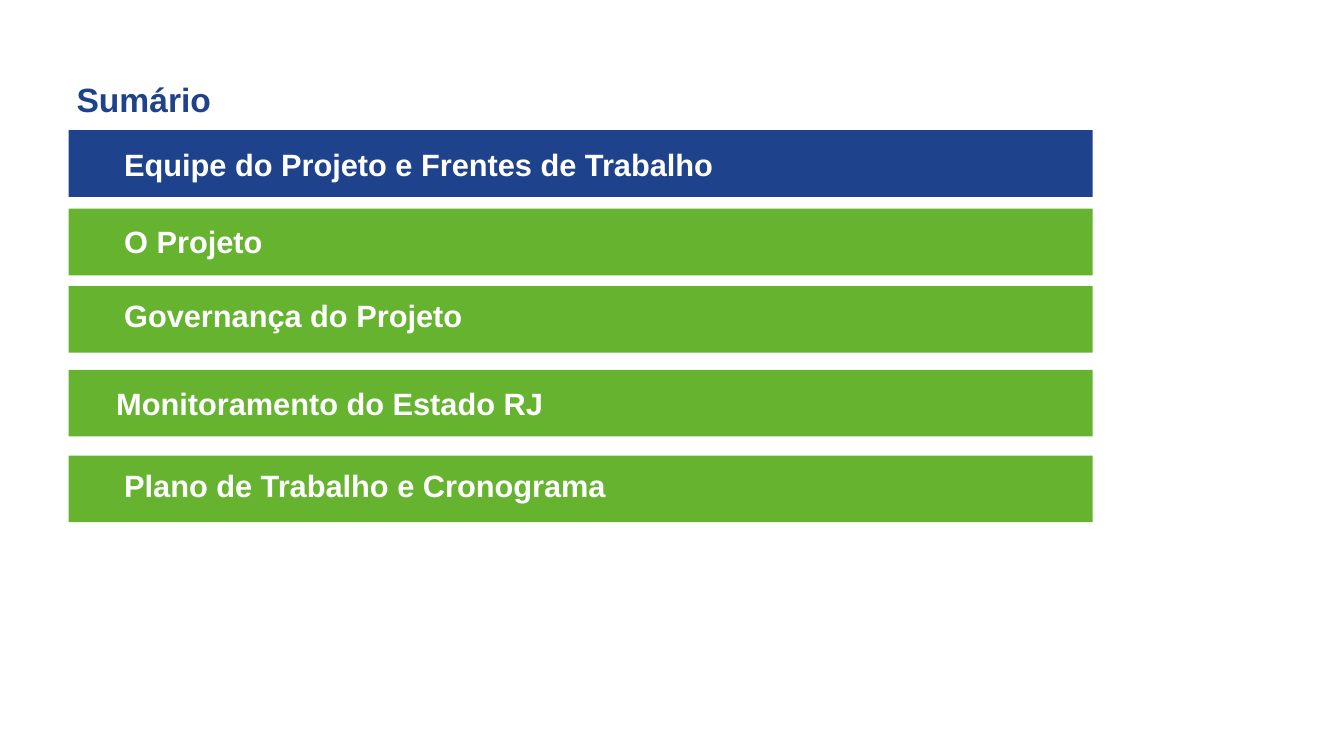
from pptx import Presentation
from pptx.dml.color import RGBColor
from pptx.enum.shapes import MSO_SHAPE as Shape
from pptx.enum.text import MSO_ANCHOR as Anchor, MSO_AUTO_SIZE as AutoSize, PP_ALIGN as Align
from pptx.util import Cm, Pt

BLUE, GREEN, WHITE = "1E428B", "65B32E", "FFFFFF"
BAR_LEFT, BAR_WIDTH, BAR_HEIGHT = 1.73, 25.81, 1.68
LABEL_HEIGHT, INSET, TEXT_INDENT = 1.19, 0.13, 1.4
TOPICS = [
    ("Equipe do Projeto e Frentes de Trabalho", 3.28, 0, 0.25, BLUE),
    ("O Projeto", 5.26, 0, 0.23, GREEN),
    ("Governança do Projeto", 7.21, 0, 0.13, GREEN),
    ("Monitoramento do Estado RJ", 9.32, -0.2, 0.25, GREEN),
    ("Plano de Trabalho e Cronograma", 11.48, 0, 0.15, GREEN),
]


def color(value):
    """Turn a hex string into a colour."""
    return RGBColor.from_string(value)


def write(shape, text, size, text_color):
    """Write one bold, indented line in the middle of a shape."""
    frame = shape.text_frame
    frame.text = text
    frame.word_wrap = True
    frame.auto_size = AutoSize.NONE
    frame.vertical_anchor = Anchor.MIDDLE
    frame.margin_left = Cm(TEXT_INDENT)
    frame.margin_top = frame.margin_right = frame.margin_bottom = Cm(INSET)
    paragraph = frame.paragraphs[0]
    paragraph.alignment = Align.LEFT
    paragraph.line_spacing = 1.0
    paragraph.space_before = Pt(0)
    font = paragraph.font
    font.name, font.size, font.bold = "Arial", Pt(size), True
    font.color.rgb = color(text_color)


def add_title(slide, left, top, width, height):
    """Place and format the slide title."""
    title = slide.shapes.title
    title.left, title.top = Cm(left), Cm(top)
    title.width, title.height = Cm(width), Cm(height)
    write(title, "Sumário", 24, BLUE)


def add_topic(slide, left, top, width, height, text, shift, drop, fill):
    """Group a coloured bar with its label, offset by shift and drop."""
    group = slide.shapes.add_group_shape()
    bar = group.shapes.add_shape(Shape.RECTANGLE, Cm(left), Cm(top), Cm(width), Cm(height))
    bar.shadow.inherit = False
    bar.fill.solid()
    bar.fill.fore_color.rgb = color(fill)
    bar.line.fill.background()
    label = group.shapes.add_textbox(
        Cm(left + shift), Cm(top + drop), Cm(width), Cm(LABEL_HEIGHT))
    write(label, text, 22, WHITE)


def main():
    """Build the summary slide."""
    presentation = Presentation()
    presentation.slide_width, presentation.slide_height = Cm(33.87), Cm(19.05)
    slide = presentation.slides.add_slide(presentation.slide_layouts[5])
    add_title(slide, 0.53, 1.85, BAR_WIDTH, 1.27)
    for text, top, shift, drop, fill in TOPICS:
        add_topic(slide, BAR_LEFT, top, BAR_WIDTH, BAR_HEIGHT, text, shift, drop, fill)
    presentation.save("out.pptx")


if __name__ == "__main__":
    main()
